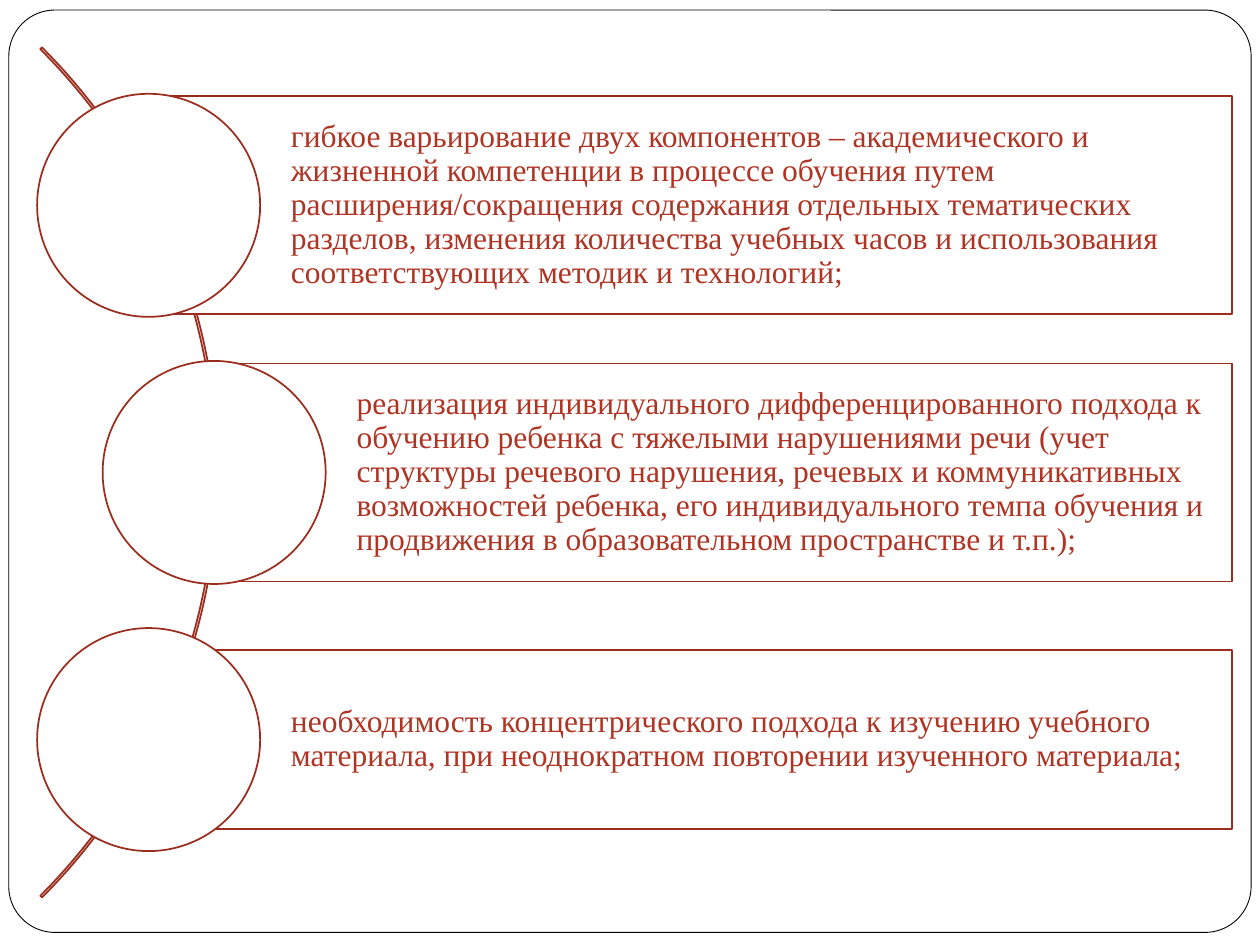
"""Build a slide of three principles set along a curved arc."""
from dataclasses import dataclass

from pptx import Presentation
from pptx.dml.color import RGBColor
from pptx.enum.shapes import MSO_SHAPE
from pptx.enum.text import MSO_ANCHOR, PP_ALIGN
from pptx.shapes.autoshape import Shape
from pptx.slide import Slide
from pptx.util import Inches, Pt

COLORS = {"paper": "FFFFFF", "frame": "000000", "line": "9B2D1F", "text": "AF3423"}
FONT = "Times New Roman"
RIGHT = 9.78
DIAMETER = 1.77
FIRST_Y, STEP_Y = 1.63, 2.12


@dataclass
class Principle:
    center_x: float
    height: float
    text: str


PRINCIPLES = [
    Principle(1.18, 1.73, "гибкое варьирование двух компонентов – академического и жизненной "
              "компетенции в процессе обучения путем расширения/сокращения содержания "
              "отдельных тематических разделов, изменения количества учебных часов и "
              "использования соответствующих методик и технологий;"),
    Principle(1.7, 1.73, "реализация индивидуального дифференцированного подхода к обучению "
              "ребенка с тяжелыми нарушениями речи (учет структуры речевого нарушения, "
              "речевых и коммуникативных возможностей ребенка, его индивидуального темпа "
              "обучения и продвижения в образовательном пространстве и т.п.);"),
    Principle(1.18, 1.42, "необходимость концентрического подхода к изучению учебного "
              "материала, при неоднократном повторении изученного материала;"),
]


def add_outlined(s: Slide, kind: MSO_SHAPE, left: float, top: float, width: float,
                 height: float, line: str = "line", weight: float = 1) -> Shape:
    """Add a white shape with a thin outline."""
    sp = s.shapes.add_shape(kind, Inches(left), Inches(top), Inches(width), Inches(height))
    sp.shadow.inherit = False
    sp.fill.solid()
    sp.fill.fore_color.rgb = RGBColor.from_string(COLORS["paper"])
    sp.line.color.rgb = RGBColor.from_string(COLORS[line])
    sp.line.width = Pt(weight)
    return sp


def write_text(sp: Shape, text: str) -> None:
    """Set the wording of a bar, clear of the circle on its left."""
    tf = sp.text_frame
    tf.word_wrap = True
    tf.vertical_anchor = MSO_ANCHOR.MIDDLE
    tf.margin_left = Inches(1.13)
    tf.margin_top = tf.margin_right = tf.margin_bottom = Inches(0.05)
    p = tf.paragraphs[0]
    p.text = text
    p.alignment = PP_ALIGN.LEFT
    p.line_spacing = 0.9
    p.font.name = FONT
    p.font.size = Pt(18)
    p.font.color.rgb = RGBColor.from_string(COLORS["text"])


def add_principle(s: Slide, principle: Principle, center_y: float) -> None:
    """Add a bar and the circle centred on its left edge."""
    x, height = principle.center_x, principle.height
    bar = add_outlined(s, MSO_SHAPE.RECTANGLE, x, center_y - height / 2, RIGHT - x, height)
    write_text(bar, principle.text)
    radius = DIAMETER / 2
    add_outlined(s, MSO_SHAPE.OVAL, x - radius, center_y - radius, DIAMETER, DIAMETER)


def main() -> None:
    """Build and save the slide."""
    prs = Presentation()
    prs.slide_width, prs.slide_height = Inches(10), Inches(7.5)
    s = prs.slides.add_slide(prs.slide_layouts[6])
    frame = add_outlined(s, MSO_SHAPE.ROUNDED_RECTANGLE, 0.07, 0.08, 9.86, 7.32, "frame", 0.5)
    frame.adjustments[0] = 0.05
    arc = add_outlined(s, MSO_SHAPE.BLOCK_ARC, -7.81, -1.02, 9.54, 9.54)
    for i, value in enumerate((189, 27, 0.002)):
        arc.adjustments[i] = value
    for i, principle in enumerate(PRINCIPLES):
        add_principle(s, principle, FIRST_Y + i * STEP_Y)
    prs.save("out.pptx")


if __name__ == "__main__":
    main()
